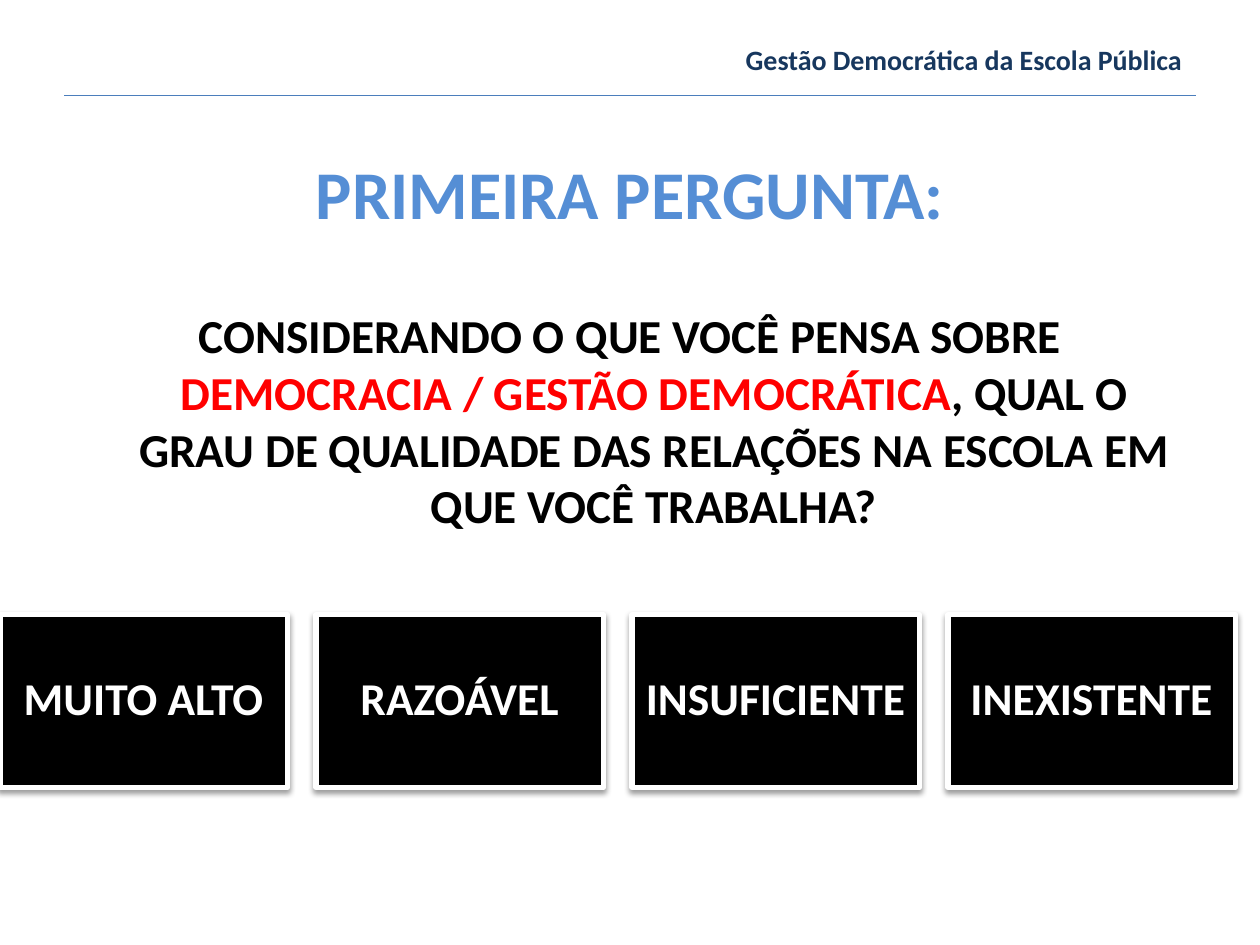
from lxml.etree import SubElement
from pptx import Presentation
from pptx.dml.color import RGBColor
from pptx.enum.shapes import MSO_CONNECTOR as LINE, MSO_SHAPE as SHAPE
from pptx.enum.text import MSO_ANCHOR as ANCHOR, PP_ALIGN as ALIGN
from pptx.oxml import parse_xml
from pptx.oxml.ns import nsdecls, qn
from pptx.util import Inches, Pt

BLACK = RGBColor(0, 0, 0)
WHITE = RGBColor(255, 255, 255)
RED = RGBColor(255, 0, 0)
SKY = RGBColor(0x55, 0x8E, 0xD5)
NAVY = RGBColor(0x17, 0x37, 0x5E)
RULE = RGBColor(0x4B, 0x7E, 0xBC)

# Content
HEADER = "Gestão Democrática da Escola Pública"
TITLE = "PRIMEIRA PERGUNTA:"
QUESTION = [
    ("CONSIDERANDO O QUE VOCÊ PENSA SOBRE ", BLACK),
    ("DEMOCRACIA / GESTÃO DEMOCRÁTICA", RED),
    (", QUAL O GRAU DE QUALIDADE DAS RELAÇÕES NA ESCOLA EM QUE VOCÊ TRABALHA?", BLACK),
]
ANSWERS = ["MUITO ALTO", "RAZOÁVEL", "INSUFICIENTE", "INEXISTENTE"]

CARD_W, CARD_H, CARD_TOP = 2.28, 1.37, 4.88
PITCH = CARD_W * 1.1
SHADOW = (
    f'<a:effectLst {nsdecls("a")}><a:outerShdw blurRad="{Pt(3.1)}" dist="{Pt(1.6)}" '
    'dir="5400000" rotWithShape="0"><a:srgbClr val="000000"><a:alpha val="38000"/>'
    '</a:srgbClr></a:outerShdw></a:effectLst>'
)


def style(para, size, align, color=None):
    para.alignment = align
    font = para.font
    font.name, font.size, font.bold = "Calibri", Pt(size), True
    if color is not None:
        font.color.rgb = color


def add_box(left, top, width, height):
    box = slide.shapes.add_textbox(*map(Inches, (left, top, width, height)))
    box.text_frame.word_wrap = True
    return box.text_frame


def hang(para, before):
    para.space_before = Pt(before)
    props = para._p.get_or_add_pPr()
    props.set("marL", str(Inches(0.38)))
    props.set("indent", str(-Inches(0.38)))


prs = Presentation()
prs.slide_width, prs.slide_height = Inches(10), Inches(7.5)
slide = prs.slides.add_slide(prs.slide_layouts[6])

# Title and question
body = add_box(0.5, 1.15, 9, 5.83)
title = body.paragraphs[0]
title.text = TITLE
style(title, 39, ALIGN.CENTER, SKY)
hang(title, 2)
ask = body.add_paragraph()
style(ask, 27, ALIGN.CENTER)
hang(ask, 42)
for text, color in QUESTION:
    run = ask.add_run()
    run.text = text
    run.font.color.rgb = color

# Header with its rule
rule = slide.shapes.add_connector(
    LINE.STRAIGHT, Inches(0.51), Inches(0.76), Inches(9.49), Inches(0.76))
rule.line.color.rgb = RULE
rule.line.width = Pt(0.75)
SubElement(rule._element.spPr, qn("a:effectLst"))
head = add_box(3.5, 0.29, 5.98, 0.37).paragraphs[0]
head.text = HEADER
style(head, 16, ALIGN.RIGHT, NAVY)

# Answer cards
for i, answer in enumerate(ANSWERS):
    card = slide.shapes.add_shape(
        SHAPE.RECTANGLE, Inches(i * PITCH), Inches(CARD_TOP),
        Inches(CARD_W), Inches(CARD_H))
    card.fill.solid()
    card.fill.fore_color.rgb = BLACK
    card.line.color.rgb = WHITE
    card.line.width = Pt(3)
    card._element.spPr.append(parse_xml(SHADOW))
    frame = card.text_frame
    frame.word_wrap = True
    frame.vertical_anchor = ANCHOR.MIDDLE
    frame.margin_left = frame.margin_right = Inches(0.1)
    label = frame.paragraphs[0]
    label.text = answer
    label.line_spacing = 0.9
    style(label, 26, ALIGN.CENTER, WHITE)

prs.save("out.pptx")
